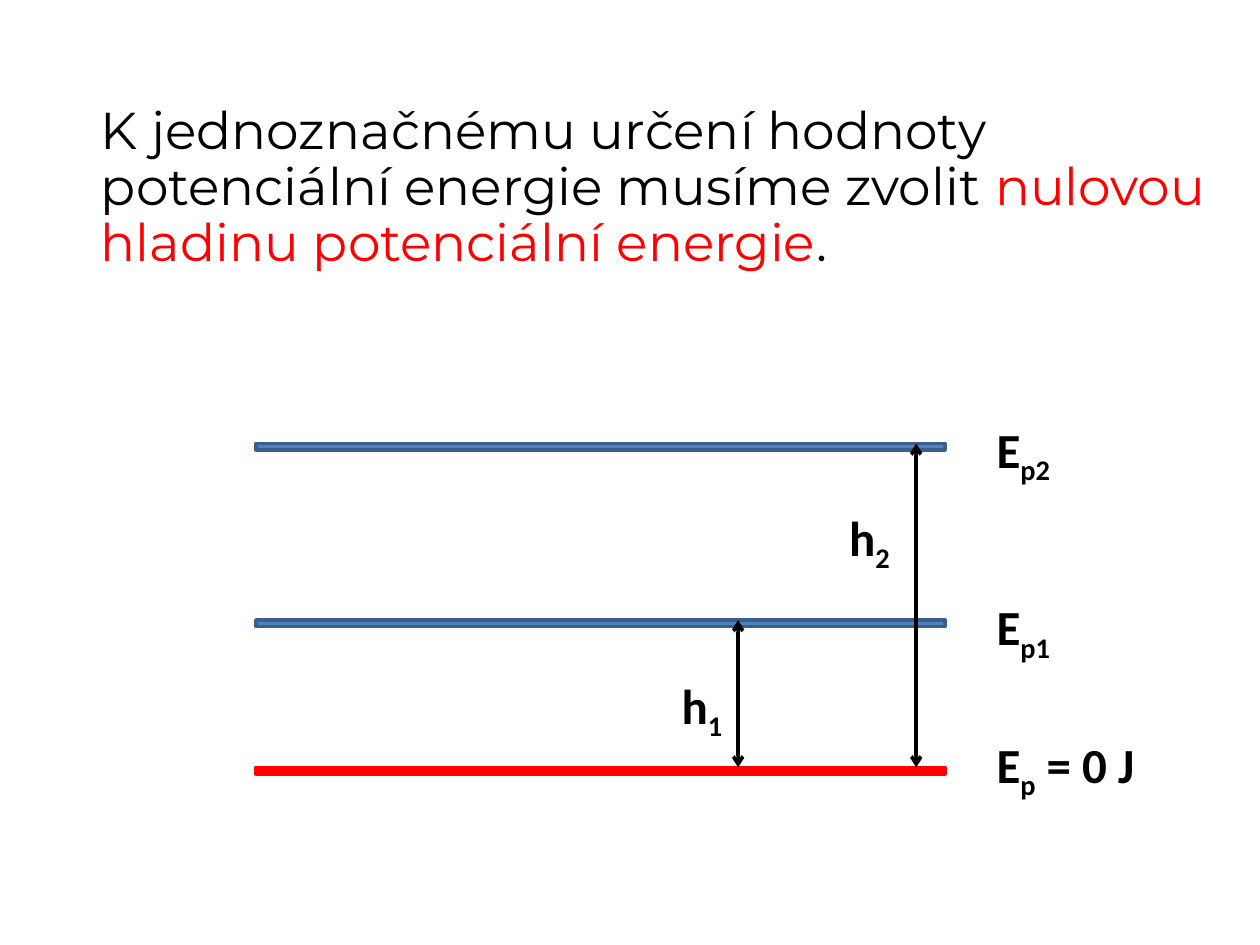
from dataclasses import dataclass

from lxml import etree
from pptx import Presentation
from pptx.dml.color import RGBColor
from pptx.enum.shapes import MSO_CONNECTOR, MSO_SHAPE
from pptx.enum.text import MSO_ANCHOR, MSO_AUTO_SIZE, PP_ALIGN
from pptx.oxml.ns import qn
from pptx.util import Cm, Pt

RECT = MSO_SHAPE.RECTANGLE
STRAIGHT = MSO_CONNECTOR.STRAIGHT
TOP = MSO_ANCHOR.TOP
NO_FIT, GROW = MSO_AUTO_SIZE.NONE, MSO_AUTO_SIZE.SHAPE_TO_FIT_TEXT
LEFT = PP_ALIGN.LEFT


@dataclass(frozen=True)
class Theme:
    black: RGBColor = RGBColor(0, 0, 0)
    red: RGBColor = RGBColor(255, 0, 0)
    blue: RGBColor = RGBColor(0x4F, 0x81, 0xBD)
    dark_blue: RGBColor = RGBColor(0x3A, 0x5F, 0x8C)
    title_font: str = "Montserrat"
    label_font: str = "Calibri"
    title_size: Pt = Pt(29.6)
    label_size: Pt = Pt(28)
    line_width: Pt = Pt(2)


def apply(target, values):
    for name, value in values.items():
        setattr(target, name, value)


class SlideBuilder:
    """Draws styled elements on the current slide."""

    def __init__(self, prs, theme):
        self.theme = theme
        self.s = prs.slides.add_slide(prs.slide_layouts[5])

    def run(self, p, text, color, **font):
        r = p.add_run()
        r.text = text
        apply(r.font, font)
        r.font.color.rgb = color
        return r

    def title(self, x, y, w, h, parts):
        t, sp = self.theme, self.s.shapes.title
        apply(sp, {"left": Cm(x), "top": Cm(y), "width": Cm(w), "height": Cm(h)})
        tf = sp.text_frame
        apply(tf, {"word_wrap": True, "auto_size": NO_FIT, "vertical_anchor": TOP})
        p = tf.paragraphs[0]
        apply(p, {"alignment": LEFT, "line_spacing": 0.9,
                  "space_before": Pt(6), "space_after": Pt(12)})
        for text, color in parts:
            self.run(p, text, color, name=t.title_font, size=t.title_size)

    def level(self, x, y, w, fill, line):
        sp = self.s.shapes.add_shape(RECT, Cm(x), Cm(y), Cm(w), Cm(0.13))
        sp.shadow.inherit = False
        sp.fill.solid()
        sp.fill.fore_color.rgb = fill
        sp.line.color.rgb = line
        sp.line.width = self.theme.line_width

    def label(self, x, y, w, base, sub, tail=""):
        t = self.theme
        sp = self.s.shapes.add_textbox(Cm(x), Cm(y), Cm(w), Cm(1.45))
        tf = sp.text_frame
        apply(tf, {"word_wrap": True, "auto_size": GROW})
        font = {"name": t.label_font, "size": t.label_size, "bold": True}
        p = tf.paragraphs[0]
        self.run(p, base, t.black, **font)
        r = self.run(p, sub, t.black, **font)
        r.font._element.set("baseline", "-25000")
        if tail:
            self.run(p, tail, t.black, **font)

    def height_arrow(self, x, top, bottom):
        sp = self.s.shapes.add_connector(STRAIGHT, Cm(x), Cm(top), Cm(x), Cm(bottom))
        sp.line.color.rgb = self.theme.black
        sp.line.width = self.theme.line_width
        ln = sp.line._get_or_add_ln()
        for end in ("a:headEnd", "a:tailEnd"):
            etree.SubElement(ln, qn(end), type="arrow")
        etree.SubElement(sp._element.spPr, qn("a:effectLst"))


def main():
    prs = Presentation()
    apply(prs, {"slide_width": Cm(25.4), "slide_height": Cm(19.05)})
    t = Theme()
    b = SlideBuilder(prs, t)
    b.title(1.78, 1.98, 22.86, 3.96, [
        ("K jednoznačnému určení hodnoty potenciální energie musíme zvolit ", t.black),
        ("nulovou hladinu potenciální energie", t.red),
        (".", t.black),
    ])

    upper, middle, zero = 8.94, 12.5, 15.47
    levels = [
        (upper, t.blue, t.dark_blue, 8.33, "p2", ""),
        (middle, t.blue, t.dark_blue, 11.91, "p1", ""),
        (zero, t.red, t.red, 14.68, "p", " = 0 J"),
    ]
    for y, fill, line, label_y, sub, tail in levels:
        b.level(5.16, y, 13.89, fill, line)
        b.label(19.84, label_y, 5.56, "E", sub, tail)

    heights = [(18.47, upper, 16.87, 10.11, "2"), (14.88, middle, 13.49, 13.49, "1")]
    for x, top, label_x, label_y, sub in heights:
        b.height_arrow(x, top, zero)
        b.label(label_x, label_y, 2.18, "h", sub)

    prs.save("out.pptx")


if __name__ == "__main__":
    main()
